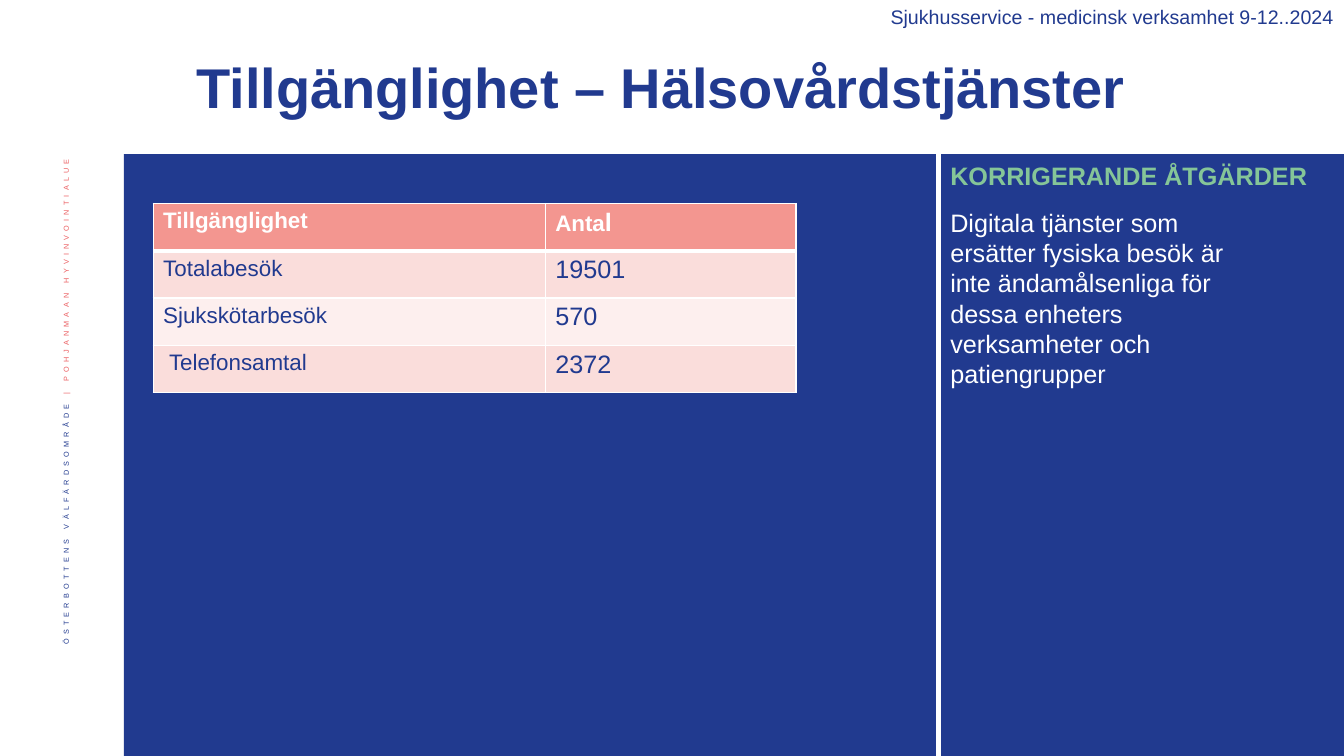
from lxml.etree import SubElement
from pptx import Presentation
from pptx.dml.color import RGBColor
from pptx.enum.shapes import MSO_CONNECTOR as Connector, MSO_SHAPE as Shape
from pptx.enum.text import MSO_ANCHOR as Anchor, PP_ALIGN as Align
from pptx.oxml import parse_xml
from pptx.oxml.ns import nsdecls, qn
from pptx.util import Cm, Pt

NAVY = RGBColor(0x21, 0x3A, 0x8F)
WHITE = RGBColor(0xFF, 0xFF, 0xFF)
CORAL = RGBColor(0xEB, 0x5C, 0x5F)
GREEN = RGBColor(0x85, 0xC5, 0x98)
HEADER_PINK = RGBColor(0xF3, 0x96, 0x90)
ROW_PINK = RGBColor(0xFA, 0xDD, 0xDB)
ROW_PALE = RGBColor(0xFD, 0xEF, 0xEE)


class SlideBuilder:
    font_name = "Arial"

    def __init__(self, page):
        self.page = page

    def span(self, para, text, size, color, bold=False):
        span = para.add_run()
        span.text = text
        font = span.font
        font.name, font.size, font.bold = self.font_name, Pt(size), bold
        font.color.rgb = color
        return span

    def panel(self, left, top, width, height, color, line_width=0):
        panel = self.page.shapes.add_shape(
            Shape.RECTANGLE, Cm(left), Cm(top), Cm(width), Cm(height))
        panel.shadow.inherit = False
        panel.fill.solid()
        panel.fill.fore_color.rgb = color
        if line_width:
            panel.line.color.rgb = color
            panel.line.width = Pt(line_width)
        else:
            panel.line.fill.background()

    def divider(self, x, top, bottom, color, width):
        line = self.page.shapes.add_connector(
            Connector.STRAIGHT, Cm(x), Cm(top), Cm(x), Cm(bottom))
        line.line.color.rgb = color
        line.line.width = Pt(width)
        SubElement(line._element.spPr, qn("a:effectLst"))

    def text(self, left, top, width, height, runs, size, bold=False,
             align=Align.LEFT, anchor=Anchor.TOP, spacing=1.0):
        box = self.page.shapes.add_textbox(Cm(left), Cm(top), Cm(width), Cm(height))
        frame = box.text_frame
        frame.word_wrap = True
        frame.vertical_anchor = anchor
        para = frame.paragraphs[0]
        para.alignment = align
        para.line_spacing = spacing
        for text, color in runs:
            self.span(para, text, size, color, bold)
        return box

    def side_label(self, left, top, width, height, runs):
        box = self.text(left, top, width, height, runs, 9, align=Align.RIGHT,
                        anchor=Anchor.MIDDLE, spacing=0.9)
        box.text_frame._txBody.bodyPr.set("vert", "vert270")
        for span in box.text_frame.paragraphs[0].runs:
            properties = span._r.get_or_add_rPr()
            properties.set("baseline", "30000")
            properties.set("spc", "300")

    def borders(self, cell, widths):
        properties = cell._tc.get_or_add_tcPr()
        for index, (side, width) in enumerate(widths.items()):
            properties.insert(index, parse_xml(
                f'<a:ln{side} {nsdecls("a")} w="{Pt(width)}"><a:solidFill>'
                f'<a:srgbClr val="{WHITE}"/></a:solidFill></a:ln{side}>'))

    def table(self, left, top, columns, row_height, rows, fills):
        grid = self.page.shapes.add_table(
            len(rows), len(columns), Cm(left), Cm(top),
            Cm(sum(columns)), Cm(row_height * len(rows))).table
        for column, width in zip(grid.columns, columns):
            column.width = Cm(width)
        for r, (row, fill) in enumerate(zip(rows, fills)):
            grid.rows[r].height = Cm(row_height)
            for c, runs in enumerate(row):
                cell = grid.cell(r, c)
                cell.fill.solid()
                cell.fill.fore_color.rgb = fill
                para = cell.text_frame.paragraphs[0]
                for text, size in runs:
                    self.span(para, text, size, NAVY if r else WHITE, bold=r == 0)
                self.borders(cell, {"L": 1, "R": 1, "T": 3 if r == 1 else 1,
                                    "B": 3 if r == 0 else 1})


def main():
    deck = Presentation()
    deck.slide_width, deck.slide_height = Cm(33.87), Cm(19.05)
    builder = SlideBuilder(deck.slides.add_slide(deck.slide_layouts[6]))

    builder.side_label(1.07, 3.61, 1.32, 14.55, [
        ("ÖSTERBOTTENS VÄLFÄRDSOMRÅDE ", NAVY),
        ("| POHJANMAAN HYVINVOINTIALUE ", CORAL)])
    builder.panel(3.12, 0, 30.75, 19.05, NAVY)
    builder.panel(2.92, 0, 30.95, 3.86, WHITE, 1)
    builder.divider(23.65, 2.46, 19.05, WHITE, 3)

    builder.text(4.7, 1.19, 26.52, 2.16, [("Tillgänglighet – Hälsovårdstjänster", NAVY)],
                 40, bold=True, anchor=Anchor.MIDDLE, spacing=0.9)
    builder.text(23.7, 3.91, 10, 1.02, [("KORRIGERANDE ÅTGÄRDER", GREEN)], 18, bold=True)
    builder.text(21.67, 0, 12.2, 0.86,
                 [("Sjukhusservice - medicinsk verksamhet 9-12..2024", NAVY)],
                 14, align=Align.RIGHT)
    builder.text(23.7, 5.1, 7.52, 4.88, [(
        "Digitala tjänster som ersätter fysiska besök är inte ändamålsenliga "
        "för dessa enheters verksamheter och patiengrupper", WHITE)], 18)

    rows = [
        ([("Tillgänglighet", 16)], [("Anta", 16), ("l", 18)]),
        ([("Totalabesök", 16)], [("19501", 18)]),
        ([("Sjukskötarbesök", 16)], [("570", 18)]),
        ([(" Telefonsamtal", 16)], [("2372", 18)]),
    ]
    builder.table(3.86, 5.13, [9.88, 6.32], 1.19, rows,
                  [HEADER_PINK, ROW_PINK, ROW_PALE, ROW_PINK])
    deck.save("out.pptx")


if __name__ == "__main__":
    main()
